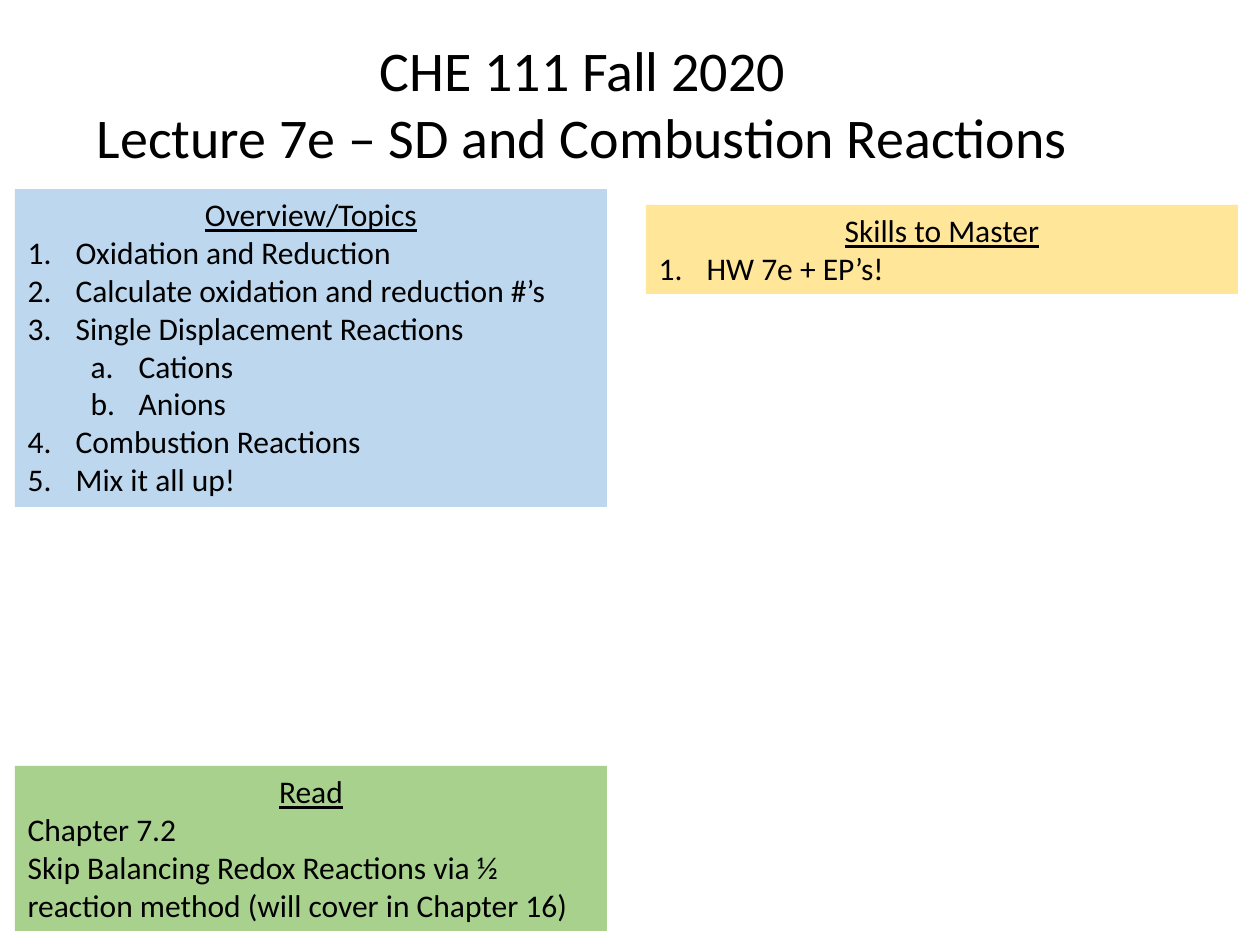
from dataclasses import dataclass

from lxml.etree import SubElement
from pptx import Presentation
from pptx.dml.color import RGBColor
from pptx.enum.text import MSO_ANCHOR, MSO_AUTO_SIZE, PP_ALIGN
from pptx.oxml.ns import qn
from pptx.util import Pt

PX = 914400 // 126
NUMBER, LETTER = "arabicPeriod", "alphaLcPeriod"


@dataclass(frozen=True)
class Theme:
    font: str = "Calibri"
    ink: RGBColor = RGBColor(0, 0, 0)
    overview: RGBColor = RGBColor(0xBD, 0xD7, 0xEE)
    skills: RGBColor = RGBColor(0xFF, 0xE6, 0x99)
    reading: RGBColor = RGBColor(0xA9, 0xD1, 0x8E)
    title_size: Pt = Pt(32)
    text_size: Pt = Pt(18)


THEME = Theme()


def place(region, box):
    region.left, region.top, region.width, region.height = (n * PX for n in box)
    frame = region.text_frame
    frame.word_wrap = True
    frame.auto_size = MSO_AUTO_SIZE.NONE
    frame.vertical_anchor = MSO_ANCHOR.TOP
    return frame


def format_line(line, size, align, underline=False):
    line.alignment = align
    line.space_before = Pt(0)
    font = line.font
    font.name, font.size, font.bold = THEME.font, size, False
    font.underline = underline
    font.color.rgb = THEME.ink


def set_marker(line, scheme):
    properties = line._p.get_or_add_pPr()
    hanging = 48 * PX if scheme else 0
    nesting = 63 * PX if scheme == LETTER else 0
    properties.set("marL", str(nesting + hanging))
    properties.set("indent", str(-hanging))
    if scheme:
        SubElement(properties, qn("a:buFont"), typeface="+mj-lt")
        SubElement(properties, qn("a:buAutoNum"), type=scheme)
    else:
        SubElement(properties, qn("a:buNone"))


def build_title(title, box, lines):
    frame = place(title, box)
    frame.text = "\n".join(lines)
    for line in frame.paragraphs:
        format_line(line, THEME.title_size, PP_ALIGN.CENTER)


def build_panel(panel, box, color, heading, entries):
    frame = place(panel, box)
    panel.fill.solid()
    panel.fill.fore_color.rgb = color
    frame.text = "\n".join([heading] + [text for text, _ in entries])
    heading_line, *entry_lines = frame.paragraphs
    set_marker(heading_line, None)
    format_line(heading_line, THEME.text_size, PP_ALIGN.CENTER, True)
    for line, (_, scheme) in zip(entry_lines, entries):
        line.level = 1 if scheme == LETTER else 0
        set_marker(line, scheme)
        format_line(line, THEME.text_size, PP_ALIGN.LEFT)


def main():
    deck = Presentation()
    deck.slide_width, deck.slide_height = 1260 * PX, 945 * PX
    slide = deck.slides.add_slide(deck.slide_layouts.get_by_name("Comparison"))
    title, overview, skills, reading, spare = list(slide.placeholders)[:5]
    spare._element.getparent().remove(spare._element)

    build_title(title, (79, 29, 1007, 149), [
        "CHE 111 Fall 2020",
        "Lecture 7e – SD and Combustion Reactions",
    ])
    build_panel(overview, (15, 189, 592, 318), THEME.overview, "Overview/Topics", [
        ("Oxidation and Reduction", NUMBER),
        ("Calculate oxidation and reduction #’s", NUMBER),
        ("Single Displacement Reactions", NUMBER),
        ("Cations", LETTER),
        ("Anions", LETTER),
        ("Combustion Reactions", NUMBER),
        ("Mix it all up!", NUMBER),
    ])
    build_panel(skills, (646, 205, 592, 89), THEME.skills, "Skills to Master", [
        ("HW 7e + EP’s!", NUMBER),
    ])
    build_panel(reading, (15, 766, 592, 165), THEME.reading, "Read", [
        ("Chapter 7.2", None),
        ("Skip Balancing Redox Reactions via ½ reaction method "
         "(will cover in Chapter 16)", None),
    ])
    deck.save("out.pptx")


if __name__ == "__main__":
    main()
